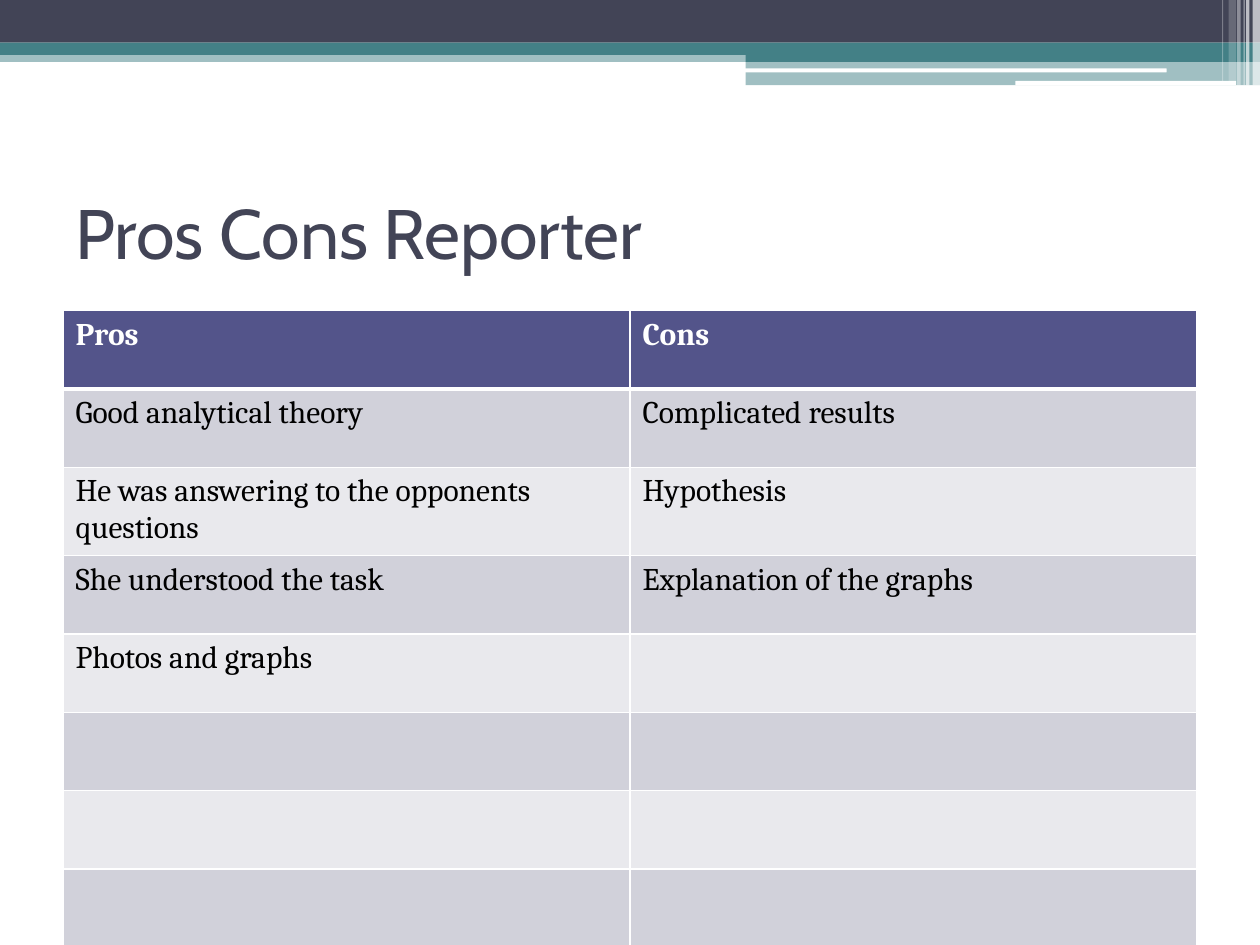
from lxml import etree
from pptx import Presentation
from pptx.dml.color import RGBColor
from pptx.enum.shapes import MSO_SHAPE
from pptx.enum.text import MSO_ANCHOR
from pptx.oxml.ns import qn
from pptx.util import Cm, Pt

RECT = MSO_SHAPE.RECTANGLE
ROUND = MSO_SHAPE.ROUNDED_RECTANGLE
MIDDLE = MSO_ANCHOR.MIDDLE

HUES = {
    "white": "FFFFFF", "black": "000000", "slate": "424456", "teal": "438086",
    "head": "53548A", "dark": "D1D1DA", "light": "E9E9ED",
}

TITLE = {"name": "Cabin", "size": Pt(40), "bold": False}
HEAD = {"name": "Cambria", "size": Pt(18), "bold": True}
BODY = {**HEAD, "bold": False}

# left, top, width, height, hue, opacity in percent
BANDS = [
    (0, 1.02, 25.4, 0.23, "teal", 50),
    (0, 0, 25.4, 0.86, "slate", 100),
    (0, 0.86, 25.4, 0.25, "teal", 100),
    (15.03, 0.99, 10.37, 0.26, "teal", 100),
    (15.03, 1.25, 10.37, 0.47, "teal", 50),
]
LINES = [
    (15.01, 1.38, 8.51, 0.08, "white", 100),
    (20.47, 1.63, 4.45, 0.09, "white", 100),
]
# left, width, height, opacity in percent
STRIPES = [
    (25.25, 0.15, 1.73, 65), (25.12, 0.07, 1.73, 65), (25.07, 0.02, 1.73, 60),
    (24.94, 0.07, 1.73, 40), (24.77, 0.15, 1.63, 20), (24.64, 0.02, 1.63, 30),
]

ROWS = [
    ("Pros", "Cons"),
    ("Good analytical theory", "Complicated results"),
    ("He was answering to the opponents questions", "Hypothesis"),
    ("She understood the task", "Explanation of the graphs"),
    ("Photos and graphs", ""),
    ("", ""),
    ("", ""),
    ("", ""),
]


def paint(fill, hue):
    fill.solid()
    fill.fore_color.rgb = RGBColor.from_string(HUES[hue])


def style(font, look, hue):
    for key, value in look.items():
        setattr(font, key, value)
    font.color.rgb = RGBColor.from_string(HUES[hue])


def add_bar(slide, kind, left, top, width, height, hue, alpha):
    bar = slide.shapes.add_shape(kind, Cm(left), Cm(top), Cm(width), Cm(height))
    bar.shadow.inherit = False
    bar.line.fill.background()
    paint(bar.fill, hue)
    if alpha < 100:
        tone = bar.fill._xPr.find(".//" + qn("a:srgbClr"))
        etree.SubElement(tone, qn("a:alpha"), val=str(alpha * 1000))


def add_title(slide, text):
    box = slide.shapes.add_textbox(Cm(1.27), Cm(3.18), Cm(22.86), Cm(2.97))
    frame = box.text_frame
    frame.word_wrap = True
    frame.vertical_anchor = MIDDLE
    run = frame.paragraphs[0].add_run()
    run.text = text
    style(run.font, TITLE, "slate")


def add_edges(cell, widths):
    props = cell._tc.get_or_add_tcPr()
    for side, width in widths.items():
        edge = etree.SubElement(props, qn("a:ln" + side), w=str(Pt(width)))
        fill = etree.SubElement(edge, qn("a:solidFill"))
        etree.SubElement(fill, qn("a:srgbClr"), val=HUES["white"])


def add_grid(slide):
    height = Cm(1.58)
    frame = slide.shapes.add_table(len(ROWS), 2, Cm(1.27), Cm(6.26),
                                   Cm(22.86), height * len(ROWS))
    grid = frame.table
    for i, texts in enumerate(ROWS):
        grid.rows[i].height = height
        back = "head" if i == 0 else ("light", "dark")[i % 2]
        look, ink = (HEAD, "white") if i == 0 else (BODY, "black")
        # A thick rule parts the header from the body
        edges = {"L": 1, "R": 1, "T": 3 if i == 1 else 1, "B": 3 if i == 0 else 1}
        for j, text in enumerate(texts):
            cell = grid.cell(i, j)
            add_edges(cell, edges)
            paint(cell.fill, back)
            cell.text = text
            style(cell.text_frame.paragraphs[0].font, look, ink)
            for run in cell.text_frame.paragraphs[0].runs:
                style(run.font, look, ink)


def main():
    deck = Presentation()
    deck.slide_width, deck.slide_height = Cm(25.4), Cm(19.05)
    slide = deck.slides.add_slide(deck.slide_layouts[6])

    # Top banner
    for band in BANDS:
        add_bar(slide, RECT, *band)
    for line in LINES:
        add_bar(slide, ROUND, *line)
    for left, width, height, alpha in STRIPES:
        add_bar(slide, RECT, left, 0, width, height, "white", alpha)

    # Title and table
    add_title(slide, "Pros Cons Reporter")
    add_grid(slide)

    deck.save("out.pptx")


if __name__ == "__main__":
    main()
